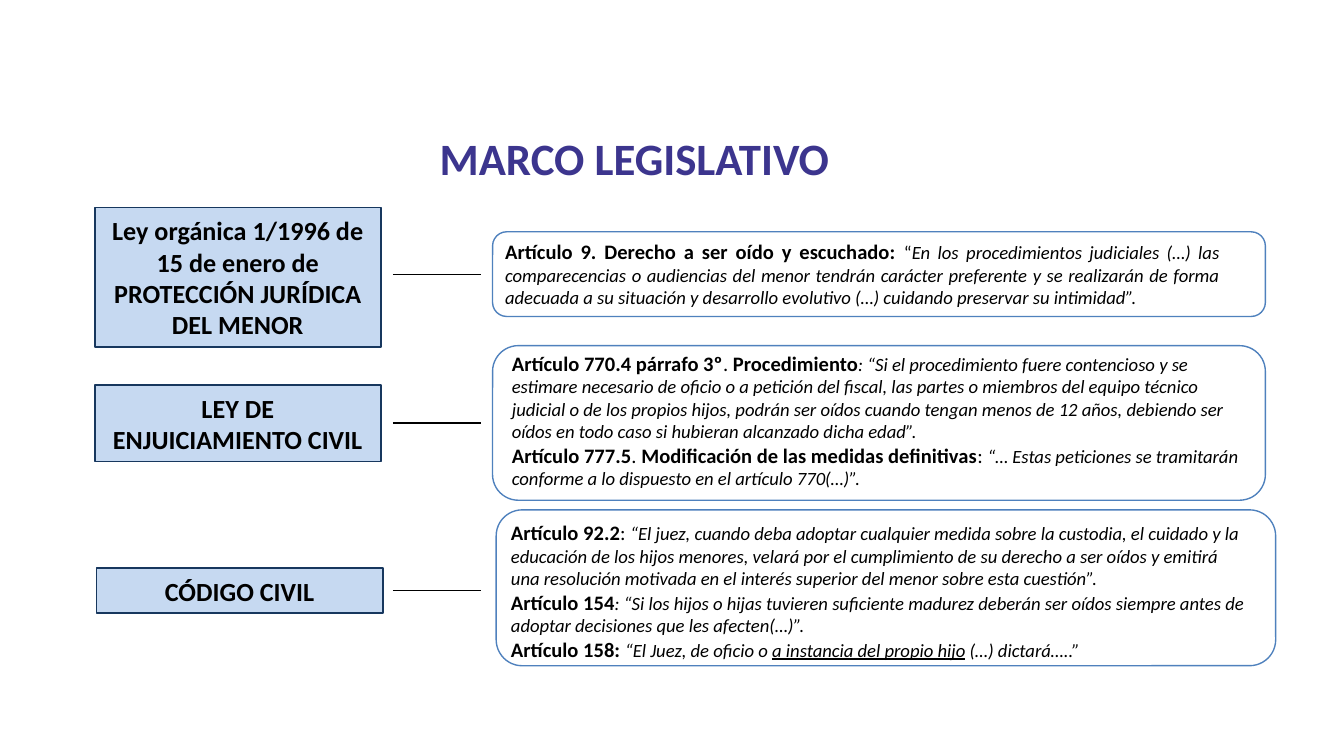
import pptx
import pptx.util
import pptx.dml.color
import pptx.enum.shapes
import pptx.enum.text
import pptx.oxml.ns
import lxml.etree

# Grid of square cells, ten to the inch, on a 16:9 slide
COLS, ROWS = 100, 56.25
CELL = 0.1
FONT = "Calibri"
HUES = {"title": "3C358E", "law": "C6D9F1", "edge": "17375E",
        "frame": "4F81BD", "ink": "000000"}
ALIGN = pptx.enum.text.PP_ALIGN
KIND = pptx.enum.shapes.MSO_SHAPE

# Run styles: size, bold, italic, underlined
STYLES = {"title": (24, True, False, False), "law": (14, True, False, False),
          "head": (11, True, False, False), "plain": (11, False, False, False),
          "small": (10, False, False, False), "quote": (10, False, True, False),
          "under": (10, False, True, True)}

# Law boxes: left, top, height, row of the link, name
LAWS = [
    (7.05, 15.45, 10.4, 20.42, "Ley orgánica 1/1996 de 15 de enero de PROTECCIÓN JURÍDICA DEL MENOR"),
    (7.05, 28.65, 5.7, 31.48, "LEY DE ENJUICIAMIENTO CIVIL"),
    (7.18, 42.28, 3.35, 43.95, "CÓDIGO CIVIL"),
]

# Articles: frame area, text area, alignment, paragraphs of (style, text)
NOTES = [
    ((36.65, 17.25, 57.5, 6.3), (36.6, 17.28, 55.1, 6.2), ALIGN.JUSTIFY, [
        [("head", "Artículo 9. Derecho a ser oído y escuchado: "),
         ("small", "“"),
         ("quote", "En los procedimientos judiciales (…) las comparecencias o "
                   "audiencias del menor tendrán carácter preferente y se "
                   "realizarán de forma adecuada a su situación y desarrollo "
                   "evolutivo (…) cuidando preservar su intimidad”. ")],
    ]),
    ((36.65, 25.72, 57.5, 11.5), (37.1, 25.6, 56.2, 11.4), ALIGN.LEFT, [
        [("head", "Artículo 770.4 párrafo 3º"), ("plain", ". "),
         ("head", "Procedimiento"),
         ("quote", ": “Si el procedimiento fuere contencioso y se estimare "
                   "necesario de oficio o a petición del fiscal, las partes o "
                   "miembros del equipo técnico judicial o de los propios "
                   "hijos, podrán ser oídos cuando tengan menos de 12 años, "
                   "debiendo ser oídos en todo caso si hubieran alcanzado "
                   "dicha edad”.")],
        [("head", "Artículo 777.5"), ("plain", ". "),
         ("head", "Modificación de las medidas definitivas"), ("plain", ": "),
         ("quote", "“… Estas peticiones se tramitarán conforme a lo dispuesto "
                   "en el artículo 770(…)”.")],
    ]),
    ((36.92, 37.94, 58, 11.6), (37.04, 38.2, 56.7, 11.6), ALIGN.LEFT, [
        [("head", "Artículo 92.2"), ("plain", ": "),
         ("quote", "“El juez, cuando deba adoptar cualquier medida sobre la "
                   "custodia, el cuidado y la educación de los hijos menores, "
                   "velará por el cumplimiento de su derecho a ser oídos y "
                   "emitirá una resolución motivada en el interés superior "
                   "del menor sobre esta cuestión”.")],
        [("head", "Artículo 154"),
         ("quote", ": “Si los hijos o hijas tuvieren suficiente madurez "
                   "deberán ser oídos siempre antes de adoptar decisiones que "
                   "les afecten(…)”.")],
        [("head", "Artículo 158: "), ("quote", "“El Juez, de oficio o "),
         ("under", "a instancia del propio hijo"),
         ("quote", " (…) dictará…..”")],
    ]),
]


def grid(*cells):
    return [pptx.util.Inches(n * CELL) for n in cells]


def tint(name):
    return pptx.dml.color.RGBColor.from_string(HUES[name])


def write(shape, paras, align, hue="ink"):
    """Fill a shape with styled runs."""
    frame = shape.text_frame
    frame.word_wrap = True
    for num, runs in enumerate(paras):
        para = frame.add_paragraph() if num else frame.paragraphs[0]
        para.alignment = align
        for style, text in runs:
            run = para.add_run()
            run.text = text
            font = run.font
            size, font.bold, font.italic, font.underline = STYLES[style]
            font.size = pptx.util.Pt(size)
            font.name = FONT
            font.color.rgb = tint(hue)


def label(slide, area, paras, align, hue="ink"):
    write(slide.shapes.add_textbox(*grid(*area)), paras, align, hue)


def panel(slide, kind, area, edge, width, fill=None):
    shape = slide.shapes.add_shape(kind, *grid(*area))
    shape.shadow.inherit = False
    if fill:
        shape.fill.solid()
        shape.fill.fore_color.rgb = tint(fill)
    else:
        shape.fill.background()
    shape.line.color.rgb = tint(edge)
    shape.line.width = pptx.util.Pt(width)
    return shape


def link(slide, row):
    """Draw a level line from the law column to the article column."""
    line = slide.shapes.add_connector(
        pptx.enum.shapes.MSO_CONNECTOR.STRAIGHT, *grid(29.24, row, 35.8, row))
    line.line.color.rgb = tint("ink")
    line.line.width = pptx.util.Pt(0.75)
    lxml.etree.SubElement(line._element.spPr, pptx.oxml.ns.qn("a:effectLst"))


def main():
    deck = pptx.Presentation()
    deck.slide_width, deck.slide_height = grid(COLS, ROWS)
    slide = deck.slides.add_slide(deck.slide_layouts[6])

    # Title
    label(slide, (6.8, 9.24, 80.8, 5), [[("title", "MARCO LEGISLATIVO")]],
          ALIGN.CENTER, "title")

    # Laws and their links
    for left, top, high, row, name in LAWS:
        box = panel(slide, KIND.RECTANGLE, (left, top, 21.3, high),
                    "edge", 1, "law")
        write(box, [[("law", name)]], ALIGN.CENTER)
        link(slide, row)

    # Articles
    for frame, area, align, paras in NOTES:
        panel(slide, KIND.ROUNDED_RECTANGLE, frame, "frame", 0.75)
        label(slide, area, paras, align)

    deck.save("out.pptx")


if __name__ == "__main__":
    main()
